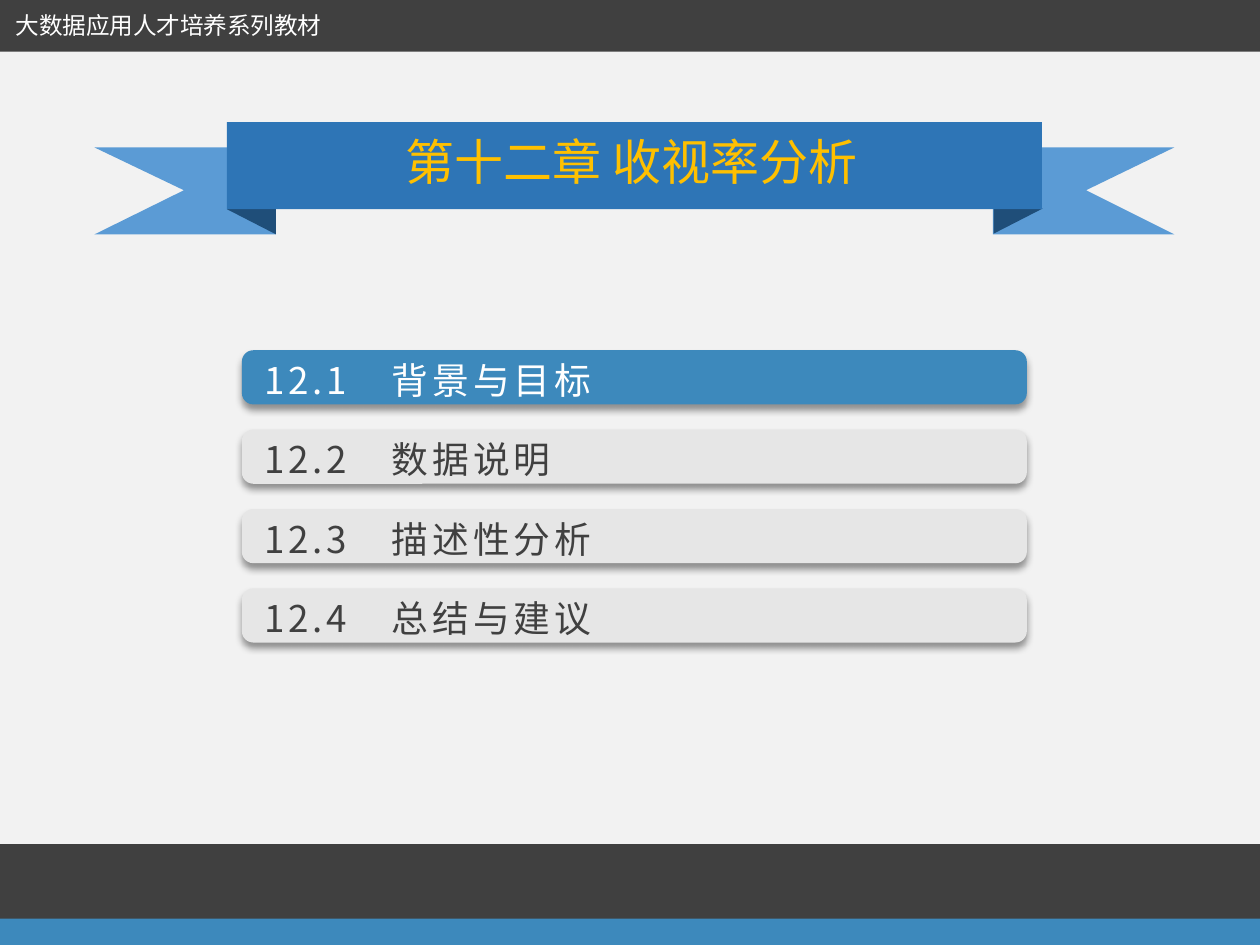
"""Build the chapter 12 contents slide with a ribbon title and four section bars."""
from dataclasses import dataclass

from lxml import etree
from pptx import Presentation
from pptx.dml.color import RGBColor
from pptx.enum.shapes import MSO_SHAPE as Shape
from pptx.enum.text import MSO_ANCHOR as Anchor, MSO_AUTO_SIZE as AutoSize, PP_ALIGN as Align
from pptx.oxml import parse_xml
from pptx.oxml.ns import nsdecls, qn
from pptx.util import Inches, Pt


@dataclass(frozen=True)
class Theme:
    font: str = "Noto Sans CJK SC"
    background: str = "F2F2F2"
    dark: str = "404040"
    accent: str = "3D89BC"
    bar: str = "E6E6E6"
    white: str = "FFFFFF"
    ribbon: str = "2E75B6"
    ribbon_tail: str = "5B9BD5"
    ribbon_fold: str = "1F4E79"
    title: str = "FFC000"
    title_size: float = 28
    section_size: float = 21
    header_size: float = 13.5


def paint(shape, color):
    shape.shadow.inherit = False
    shape.fill.solid()
    shape.fill.fore_color.rgb = RGBColor.from_string(color)
    shape.line.fill.background()


def write(shape, text, size, color, align=Align.LEFT, spacing=0):
    frame = shape.text_frame
    frame.word_wrap = False
    frame.auto_size = AutoSize.NONE
    frame.vertical_anchor = Anchor.TOP
    frame.text = text
    paragraph = frame.paragraphs[0]
    paragraph.alignment = align
    font = paragraph.font
    font.name = theme.font
    font.size = Pt(size)
    font.color.rgb = RGBColor.from_string(color)
    properties = paragraph._p.pPr.find(qn("a:defRPr"))
    properties.set("spc", str(spacing))
    etree.SubElement(properties, qn("a:ea")).set("typeface", theme.font)


theme = Theme()
presentation = Presentation()
presentation.slide_width = Inches(10)
presentation.slide_height = Inches(7.5)
slide = presentation.slides.add_slide(presentation.slide_layouts[5])
slide.background.fill.solid()
slide.background.fill.fore_color.rgb = RGBColor.from_string(theme.background)
shapes = slide.shapes

ribbon_tails = [
    [(0.75, 1.17), (2.19, 1.17), (2.19, 1.86), (0.75, 1.86), (1.46, 1.51)],
    [(9.32, 1.17), (7.88, 1.17), (7.88, 1.86), (9.32, 1.86), (8.62, 1.51)],
]
for points in ribbon_tails:
    corners = [(Inches(x), Inches(y)) for x, y in points]
    builder = shapes.build_freeform(*corners[0])
    builder.add_line_segments(corners[1:], close=True)
    paint(builder.convert_to_shape(), theme.ribbon_tail)

ribbon_folds = [(1.8, 1.66, 0.39, 0.2, 180), (7.98, 1.56, 0.2, 0.39, 90)]
for left, top, width, height, rotation in ribbon_folds:
    fold = shapes.add_shape(
        Shape.RIGHT_TRIANGLE, Inches(left), Inches(top), Inches(width), Inches(height))
    fold.rotation = rotation
    paint(fold, theme.ribbon_fold)

bands = [
    (1.8, 0.97, 6.47, 0.69, theme.ribbon),
    (0, 0, 10, 0.41, theme.dark),
    (0, 6.7, 10, 0.6, theme.dark),
    (0, 7.29, 10, 0.21, theme.accent),
]
for left, top, width, height, color in bands:
    band = shapes.add_shape(
        Shape.RECTANGLE, Inches(left), Inches(top), Inches(width), Inches(height))
    paint(band, color)

title = shapes.title
title.left, title.top = Inches(3.12), Inches(0.99)
title.width, title.height = Inches(3.97), Inches(0.66)
write(title, "第十二章 收视率分析", theme.title_size, theme.title)
shapes._spTree.append(title._element)

header = shapes.add_textbox(Inches(0.01), Inches(0.04), Inches(2.66), Inches(0.33))
write(header, "大数据应用人才培养系列教材", theme.header_size, theme.white, Align.CENTER)

sections = ["背景与目标", "数据说明", "描述性分析", "总结与建议"]
current_section = 1
for number, name in enumerate(sections, start=1):
    is_current = number == current_section
    offset = 0.63 * (number - 1)
    bar = shapes.add_shape(
        Shape.ROUNDED_RECTANGLE, Inches(1.92), Inches(2.78 + offset), Inches(6.23), Inches(0.43))
    bar.adjustments[0] = 0.21
    paint(bar, theme.accent if is_current else theme.bar)
    effects = bar._element.spPr.find(qn("a:effectLst"))
    effects.append(parse_xml(
        f'<a:outerShdw {nsdecls("a")} blurRad="{Pt(4)}" dist="{Pt(3)}" dir="5400000" '
        'algn="t" rotWithShape="0"><a:srgbClr val="000000"><a:alpha val="40000"/>'
        '</a:srgbClr></a:outerShdw>'))
    label = shapes.add_textbox(Inches(2), Inches(2.79 + offset), Inches(2.88), Inches(0.45))
    write(label, f"12.{number}　{name}", theme.section_size,
          theme.white if is_current else theme.dark, spacing=220)

presentation.save("out.pptx")
